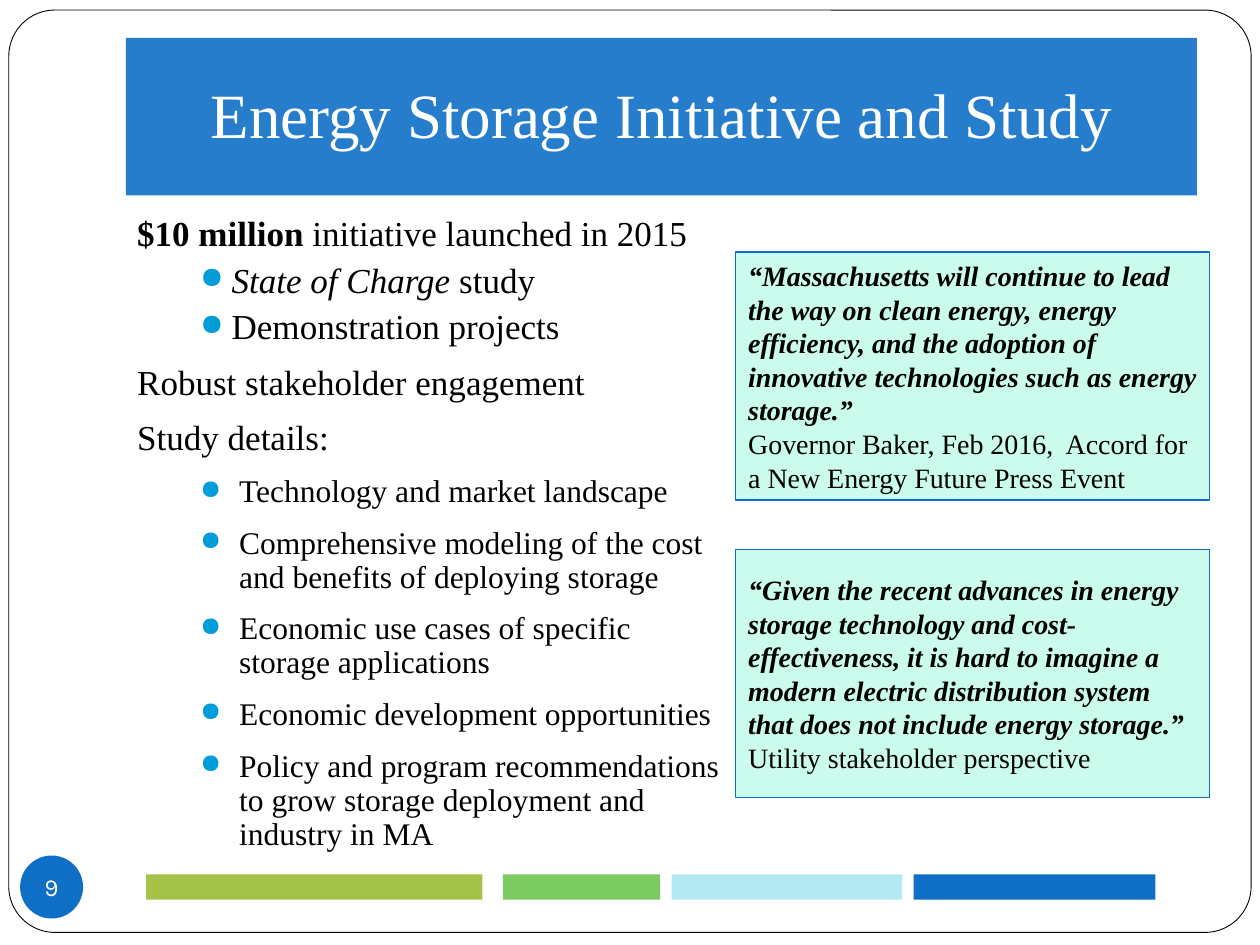
from lxml import etree
from pptx import Presentation
from pptx.dml.color import RGBColor
from pptx.enum.shapes import MSO_SHAPE as Shape
from pptx.enum.text import MSO_ANCHOR as Anchor, PP_ALIGN as Align
from pptx.oxml.ns import qn
from pptx.util import Inches, Pt

COLORS = {
    "white": "FFFFFF", "black": "000000", "blue": "0F6FC6", "bullet": "009DD9",
    "mint": "CAFBED", "olive": "A5C249", "green": "7CCA62", "ice": "B3EAF2",
}
SERIF = "Times New Roman"
BARS = [(1.16, 2.67, "olive"), (3.99, 1.25, "green"),
        (5.33, 1.83, "ice"), (7.25, 1.92, "blue")]
QUOTES = [
    (2, "“Massachusetts will continue to lead the way on clean energy, energy "
        "efficiency, and the adoption of innovative technologies such as energy storage.”",
     "Governor Baker, Feb 2016,  Accord for a New Energy Future Press Event"),
    (4.36, "“Given the recent advances in energy storage technology and "
           "cost-effectiveness, it is hard to imagine a modern electric distribution "
           "system that does not include energy storage.”",
     "Utility stakeholder perspective"),
]
DETAILS = [
    "Technology and market landscape",
    "Comprehensive modeling of the cost and benefits of deploying storage",
    "Economic use cases of specific storage applications",
    "Economic development opportunities",
    "Policy and program recommendations to grow storage deployment and industry in MA",
]


def rgb(name):
    return RGBColor.from_string(COLORS[name])


def add_block(slide, kind, at, fill, line=None, width=0.75):
    shape = slide.shapes.add_shape(kind, *map(Inches, at))
    shape.shadow.inherit = False
    shape.fill.solid()
    shape.fill.fore_color.rgb = rgb(fill)
    if line:
        shape.line.color.rgb = rgb(line)
        shape.line.width = Pt(width)
    else:
        shape.line.fill.background()
    return shape


def set_opacity(shape, percent):
    color = shape.fill._xPr.find(qn("a:solidFill"))[0]
    etree.SubElement(color, qn("a:alpha")).set("val", str(percent * 1000))


def set_frame(shape, margins=(0.1, 0.05, 0.1, 0.05), anchor=Anchor.MIDDLE, wrap=True):
    frame = shape.text_frame
    frame.word_wrap = wrap
    frame.vertical_anchor = anchor
    (frame.margin_left, frame.margin_top,
     frame.margin_right, frame.margin_bottom) = map(Inches, margins)
    return frame


def add_span(para, text, size, color="black", font=SERIF, bold=False, italic=False):
    span = para.add_run()
    span.text = text
    span.font.size = Pt(size)
    span.font.name = font
    span.font.color.rgb = rgb(color)
    span.font.bold = bold
    span.font.italic = italic


def next_para(frame, align=Align.LEFT):
    """Return the empty first paragraph, or a new one after the text so far."""
    first = frame.paragraphs[0]
    para = frame.add_paragraph() if first.runs else first
    para.alignment = align
    return para


def add_item(frame, before=10, level=0, left=0, hanging=0):
    """Add a body paragraph, bulleted when it has a hanging indent."""
    para = next_para(frame)
    para.level = level
    para.line_spacing = 0.9
    para.space_before = Pt(before)
    props = para._p.get_or_add_pPr()
    props.set("marL", str(Inches(left)))
    props.set("indent", str(-Inches(hanging)))
    if hanging:
        color = etree.SubElement(props, qn("a:buClr"))
        etree.SubElement(color, qn("a:srgbClr")).set("val", COLORS["bullet"])
        etree.SubElement(props, qn("a:buSzPct")).set("val", "85000")
        etree.SubElement(props, qn("a:buChar")).set("char", "●")
    return para


def add_title(slide):
    banner = add_block(slide, Shape.RECTANGLE, (1, 0.3, 8.5, 1.25), "blue")
    set_opacity(banner, 90)
    frame = set_frame(banner, (0.1, 0.05, 0.1, 0.1))
    add_span(next_para(frame, Align.CENTER), "Energy Storage Initiative and Study", 36, "white")


def add_page_number(slide):
    badge = add_block(slide, Shape.OVAL, (0.16, 6.79, 0.5, 0.5), "blue")
    frame = set_frame(badge, (0, 0, 0, 0), wrap=False)
    add_span(next_para(frame, Align.CENTER), "9", 14, "white", "Karla")


def add_body(slide):
    box = slide.shapes.add_textbox(*map(Inches, (0.99, 1.67, 4.85, 5.16)))
    frame = set_frame(box, anchor=Anchor.TOP)
    para = add_item(frame)
    add_span(para, "$10 million", 20, bold=True)
    add_span(para, " initiative launched in 2015", 20)
    para = add_item(frame, 5, 1, 0.75, 0.25)
    add_span(para, "State of Charge", 20, italic=True)
    add_span(para, " study", 20)
    add_span(add_item(frame, 5, 1, 0.75, 0.25), "Demonstration projects", 20)
    add_span(add_item(frame), "Robust stakeholder engagement", 20)
    add_span(add_item(frame, level=1), "Study details:", 20)
    for text in DETAILS:
        add_span(add_item(frame, 10, 2, 0.81, 0.31), text, 18)


def add_quote(slide, top, quote, source):
    card = add_block(slide, Shape.RECTANGLE, (5.84, top, 3.76, 1.97), "mint", "blue")
    frame = set_frame(card)
    add_span(next_para(frame), quote, 16, bold=True, italic=True)
    add_span(next_para(frame), source, 16)


def main():
    deck = Presentation()
    deck.slide_width, deck.slide_height = Inches(10), Inches(7.5)
    page = deck.slides.add_slide(deck.slide_layouts[6])
    border = add_block(page, Shape.ROUNDED_RECTANGLE, (0.07, 0.08, 9.86, 7.32),
                       "white", "black", 0.5)
    border.adjustments[0] = 0.05
    add_title(page)
    add_page_number(page)
    add_body(page)
    for top, quote, source in QUOTES:
        add_quote(page, top, quote, source)
    for left, width, color in BARS:
        add_block(page, Shape.RECTANGLE, (left, 6.94, width, 0.2), color)
    deck.save("out.pptx")


if __name__ == "__main__":
    main()
